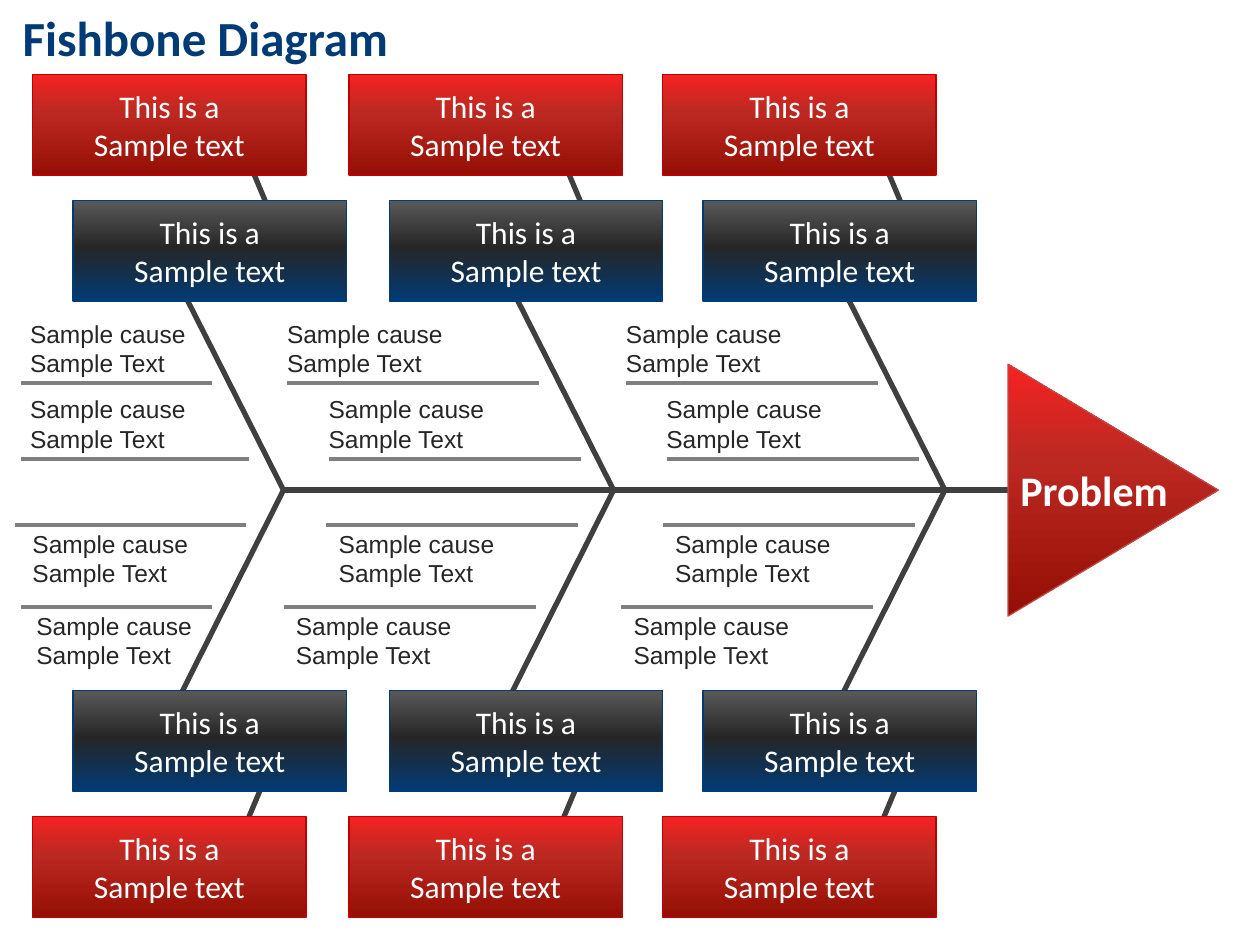
import copy

import pptx
import pptx.dml.color
import pptx.enum.shapes
import pptx.enum.text
import pptx.oxml
import pptx.util

Inches = pptx.util.Inches
SHAPE = pptx.enum.shapes.MSO_SHAPE
ALIGN = pptx.enum.text.PP_ALIGN
ANCHOR = pptx.enum.text.MSO_ANCHOR

COLORS = {
    "navy": "003B76", "ink": "262626", "ash": "595959", "bone": "3F3F3F",
    "gray": "7F7F7F", "dark": "950F05", "brick": "BC2922", "red": "F62222",
    "edge": "C00000", "rust": "BE4B48", "white": "FFFFFF",
}
FIRE = [(0, "dark"), (0.63, "brick"), (1, "red")]
NIGHT = [(0, "navy"), (0.53, "ink"), (1, "ash")]

WIDE, HIGH = 2.17, 0.8
SPINE = 3.89
LABEL = ["This is a", "Sample text"]
CAUSE = ["Sample cause", "Sample Text"]

# Each column: box left, stub left, rib foot.
COLUMNS = [(0.26, 1.83, 2.25), (2.77, 4.33, 4.87), (5.26, 6.87, 7.5)]
# Each cause: line left, line length, text offset.
UPPER = {
    3.04: [(0.17, 1.51, -0.03), (2.28, 2, -0.1), (4.97, 2, -0.1)],
    3.64: [(0.17, 1.81, -0.03), (2.61, 2, -0.1), (5.29, 2, -0.1)],
}
LOWER = {
    4.17: [(0.12, 1.83, 0.04), (2.59, 2, 0), (5.26, 2, 0)],
    4.82: [(0.17, 1.51, 0.02), (2.25, 2, 0), (4.93, 2, 0)],
}


def rgb(name):
    """Return the named color."""
    return pptx.dml.color.RGBColor.from_string(COLORS[name])


def write(shape, lines, size=18, font="Calibri", color="white", bold=False,
          align=ALIGN.LEFT, anchor=ANCHOR.TOP, inset=(0.1, 0.05)):
    """Fill a shape with formatted paragraphs."""
    frame = shape.text_frame
    frame.word_wrap = True
    frame.vertical_anchor = anchor
    frame.margin_left = frame.margin_right = Inches(inset[0])
    frame.margin_top = frame.margin_bottom = Inches(inset[1])
    frame.text = "\n".join(lines)
    for para in frame.paragraphs:
        para.alignment = align
        face = para.runs[0].font
        face.size, face.name, face.bold = pptx.util.Pt(size), font, bold
        face.color.rgb = rgb(color)


def line(slide, start, end, color="bone", width=3):
    """Draw a straight line between two points."""
    ends = [Inches(n) for n in (*start, *end)]
    link = slide.shapes.add_connector(
        pptx.enum.shapes.MSO_CONNECTOR.STRAIGHT, *ends)
    link.line.color.rgb = rgb(color)
    link.line.width = pptx.util.Pt(width)
    link._element.spPr.append(pptx.oxml.parse_xml(
        '<a:effectLst xmlns:a='
        '"http://schemas.openxmlformats.org/drawingml/2006/main"/>'))


def block(slide, kind, box, stops, edge, angle=90):
    """Add a shape with a three-stop gradient."""
    shape = slide.shapes.add_shape(kind, *[Inches(n) for n in box])
    shape.shadow.inherit = False
    shape.fill.gradient()
    shape.fill.gradient_angle = angle
    first = shape.fill.gradient_stops[0]._gs
    first.addnext(copy.deepcopy(first))
    for stop, (place, color) in zip(shape.fill.gradient_stops, stops):
        stop.position = place
        stop.color.rgb = rgb(color)
    shape.line.color.rgb = rgb(edge)
    shape.line.width = pptx.util.Pt(0.75)
    return shape


def note(slide, left, top):
    """Add the text of one cause."""
    area = slide.shapes.add_textbox(
        Inches(left), Inches(top), Inches(1.44), Inches(0.57))
    write(area, CAUSE, size=14, font="Arial", color="ink")


def half(slide, outer, inner, tip, causes, drop):
    """Place one side of the fish from its outer and inner box tops."""
    for left, stub, foot in COLUMNS:
        line(slide, (stub, outer + 0.35), (stub + 0.42, inner + 0.35))
        line(slide, (foot - 0.84, tip), (foot, SPINE))
    for shift, top, stops, edge in [(0.32, inner, NIGHT, "navy"),
                                    (0, outer, FIRE, "edge")]:
        for left, stub, foot in COLUMNS:
            card = block(slide, SHAPE.RECTANGLE,
                         (left + shift, top, WIDE, HIGH), stops, edge)
            write(card, LABEL, align=ALIGN.CENTER, anchor=ANCHOR.MIDDLE,
                  inset=(0, 0))
    for y, row in causes.items():
        for x, length, shift in row:
            line(slide, (x, y), (x + length, y), "gray", 2.25)
            note(slide, x + shift, y + drop)


def head(slide, left, top, width, height):
    """Place the triangular head and its label in the given box."""
    turn = (width - height) / 2
    shape = block(slide, SHAPE.ISOSCELES_TRIANGLE,
                  (left + turn, top - turn, height, width),
                  FIRE, "rust", angle=180)
    shape.rotation = 90
    area = slide.shapes.add_textbox(
        Inches(left), Inches(top + 0.75), Inches(1.38), Inches(0.5))
    write(area, ["Problem"], size=24, bold=True)


def title(slide, left, top, width, height):
    """Place the slide title in the given box."""
    shape = slide.shapes.title
    shape.left, shape.top = Inches(left), Inches(top)
    shape.width, shape.height = Inches(width), Inches(height)
    write(shape, ["Fishbone Diagram"], size=28, color="navy", bold=True,
          anchor=ANCHOR.MIDDLE)


def main():
    """Build and save the slide."""
    deck = pptx.Presentation()
    deck.slide_width, deck.slide_height = Inches(10), Inches(7.5)
    slide = deck.slides.add_slide(deck.slide_layouts[5])
    title(slide, 0.08, 0, 9.25, 0.59)
    line(slide, (8, SPINE), (2.25, SPINE))
    half(slide, 0.59, 1.59, 2.23, UPPER, -0.56)
    half(slide, 6.48, 5.48, 5.56, LOWER, -0.02)
    head(slide, 8, 2.89, 1.67, 2)
    deck.save("out.pptx")


if __name__ == "__main__":
    main()
